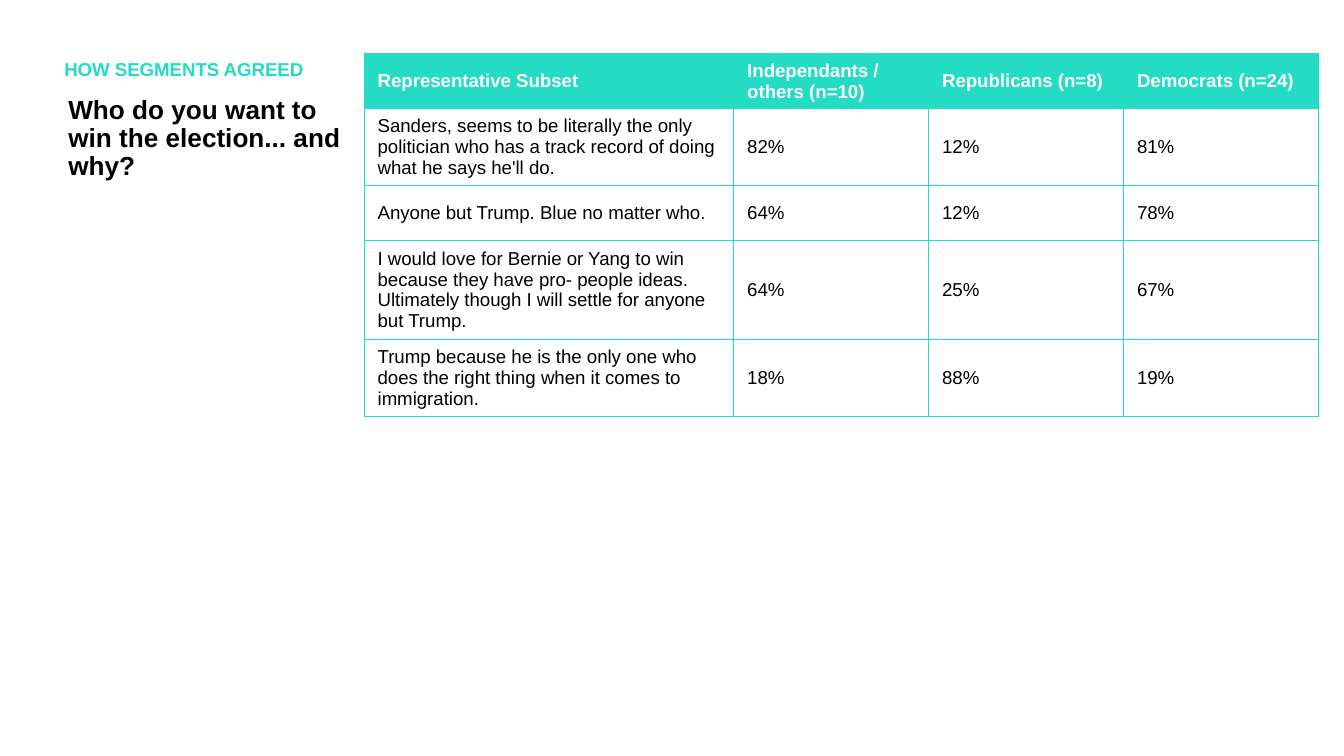
import pptx
import pptx.util
import pptx.dml.color
import pptx.enum.text
import lxml.etree

COLORS = {"teal": "24DBC3", "white": "FFFFFF", "black": "000000"}
FONT = "Arial"

# Widescreen page, 16 by 9
deck = pptx.Presentation()
deck.slide_width = pptx.util.Inches(10)
deck.slide_height = pptx.util.Inches(10 * 9 / 16)
page = deck.slides.add_slide(deck.slide_layouts[6])

# Grid: a text column on the left, the table on the right
TOP = 0.4
TABLE_LEFT = 2.71
COLUMNS = [2.75, 1.45, 1.45, 1.45]
ROW = 0.41


def style(para, size, color, bold):
    for span in para.runs:
        span.font.name = FONT
        span.font.size = pptx.util.Pt(size)
        span.font.bold = bold
        span.font.color.rgb = pptx.dml.color.RGBColor.from_string(COLORS[color])


def add_border(cell, side):
    properties = cell._tc.get_or_add_tcPr()
    line = lxml.etree.SubElement(properties, pptx.oxml.ns.qn("a:" + side),
                                 w=str(pptx.util.Pt(0.75)))
    fill = lxml.etree.SubElement(line, pptx.oxml.ns.qn("a:solidFill"))
    lxml.etree.SubElement(fill, pptx.oxml.ns.qn("a:srgbClr"), val=COLORS["teal"])


# Question and section label
headings = [
    ("Who do you want to win the election... and why?", 0.41, 0.67, 2.3, 4.41, 14, "black"),
    ("HOW SEGMENTS AGREED", 0.38, TOP, 2.32, 0.28, 10, "teal"),
]
for text, left, top, width, height, size, color in headings:
    box = page.shapes.add_textbox(*map(pptx.util.Inches, (left, top, width, height)))
    box.text_frame.word_wrap = True
    box.text_frame.text = text
    para = box.text_frame.paragraphs[0]
    para.line_spacing = 0.9
    para.space_before = pptx.util.Pt(10)
    style(para, size, color, True)

# Agreement by segment
rows = [
    ("Representative Subset", "Independants / others (n=10)",
     "Republicans (n=8)", "Democrats (n=24)"),
    ("Sanders, seems to be literally the only politician who has a track record "
     "of doing what he says he'll do.", "82%", "12%", "81%"),
    ("Anyone but Trump. Blue no matter who.", "64%", "12%", "78%"),
    ("I would love for Bernie or Yang to win because they have pro- people ideas. "
     "Ultimately though I will settle for anyone but Trump.", "64%", "25%", "67%"),
    ("Trump because he is the only one who does the right thing when it comes to "
     "immigration.", "18%", "88%", "19%"),
]
table = page.shapes.add_table(
    len(rows), len(COLUMNS),
    pptx.util.Inches(TABLE_LEFT), pptx.util.Inches(TOP),
    pptx.util.Inches(sum(COLUMNS)), pptx.util.Inches(ROW * len(rows))).table
table.horz_banding = False

for column, width in zip(table.columns, COLUMNS):
    column.width = pptx.util.Inches(width)

for row_index, texts in enumerate(rows):
    header = row_index == 0
    table.rows[row_index].height = pptx.util.Inches(ROW)
    for column_index, text in enumerate(texts):
        cell = table.cell(row_index, column_index)
        cell.text_frame.text = text
        cell.vertical_anchor = pptx.enum.text.MSO_ANCHOR.MIDDLE
        cell.margin_top = cell.margin_bottom = pptx.util.Pt(2.5)
        style(cell.text_frame.paragraphs[0], 10, "white" if header else "black", header)
        # Borders come before the fill in the cell properties
        for side in ("lnL", "lnR", "lnT", "lnB"):
            add_border(cell, side)
        cell.fill.solid()
        cell.fill.fore_color.rgb = pptx.dml.color.RGBColor.from_string(
            COLORS["teal" if header else "white"])

deck.save("out.pptx")
